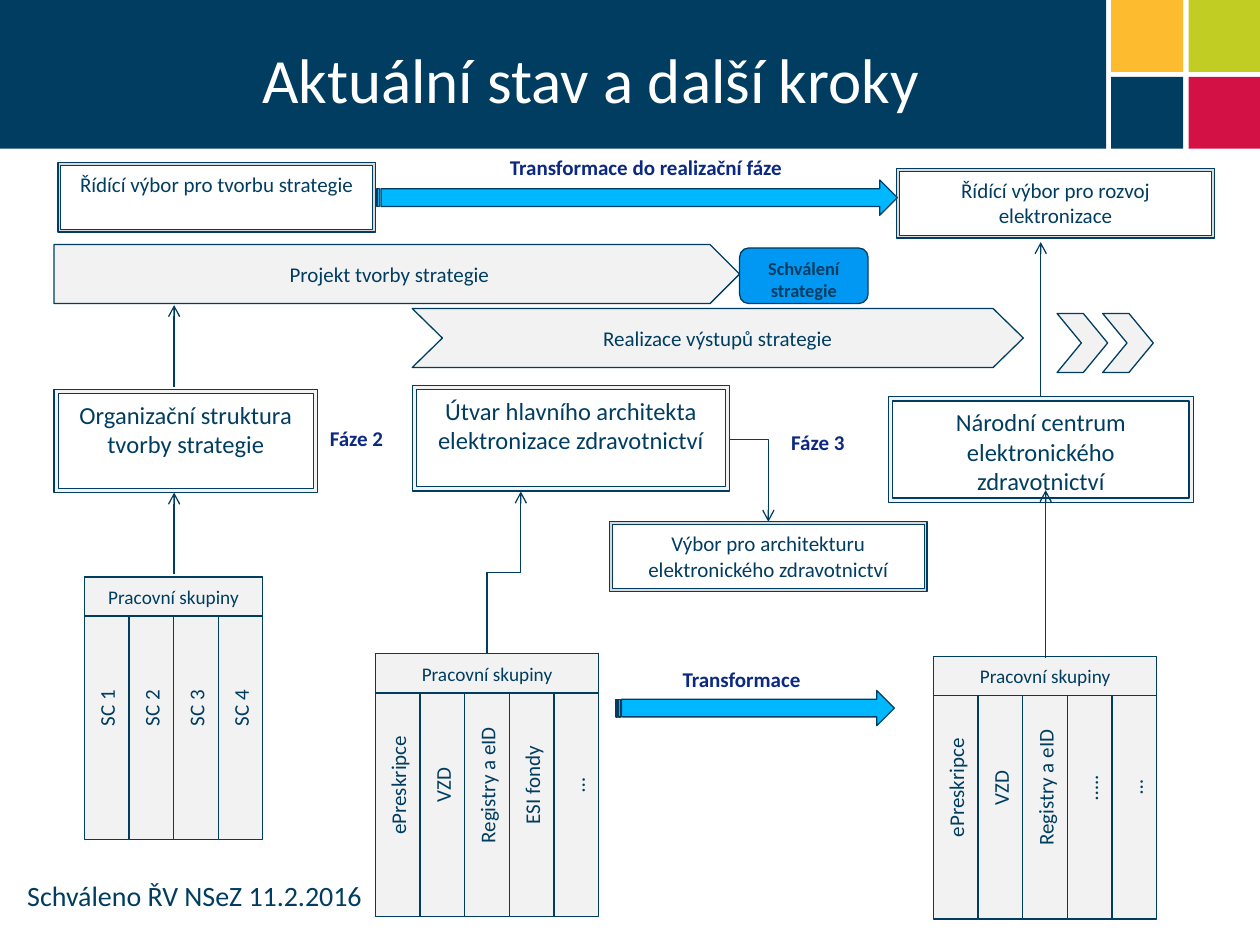
from lxml import etree
from pptx import Presentation
from pptx import util as u
from pptx.dml import color
from pptx.enum import shapes, text
from pptx.oxml import ns

Cm, Pt = u.Cm, u.Pt
KIND = shapes.MSO_SHAPE
MID, TOP = text.MSO_ANCHOR.MIDDLE, text.MSO_ANCHOR.TOP

HUES = {
    "navy": "003D61", "red": "D31145", "lime": "C2CD23", "gold": "FDBB30",
    "white": "FFFFFF", "pale": "F2F2F2", "gray": "D9D9D9", "cyan": "00B8FF",
    "azure": "0098F2", "ink": "0B2883",
}


def hue(name):
    return color.RGBColor.from_string(HUES[name])


def write(frame, words, size, tone="navy", bold=False, align=text.PP_ALIGN.CENTER):
    frame.text = words
    para = frame.paragraphs[0]
    para.alignment = align
    for run in para.runs:
        font = run.font
        font.name, font.size, font.bold = "Calibri", Pt(size), bold
        font.color.rgb = hue(tone)


def box(slide, kind, area, fill, line=True, adj=None):
    shape = slide.shapes.add_shape(kind, *map(Cm, area))
    shape.shadow.inherit = False
    shape.fill.solid()
    shape.fill.fore_color.rgb = hue(fill)
    if line:
        shape.line.color.rgb = hue("navy")
        shape.line.width = Pt(0.75)
    else:
        shape.line.fill.background()
    if adj is not None:
        shape.adjustments[0] = adj
    return shape


def fill_in(shape, words, size, anchor=MID, bold=False):
    frame = shape.text_frame
    frame.word_wrap = True
    frame.vertical_anchor = anchor
    write(frame, words, size, bold=bold)


def label(slide, area, words, size=12, tone="ink", bold=True):
    frame = slide.shapes.add_textbox(*map(Cm, area)).text_frame
    frame.word_wrap = False
    frame.auto_size = text.MSO_AUTO_SIZE.SHAPE_TO_FIT_TEXT
    write(frame, words, size, tone, bold, text.PP_ALIGN.LEFT)


def board(slide, area, words, size, fill):
    """Framed body or committee."""
    shape = box(slide, KIND.FRAME, area, fill, adj=0.041)
    fill_in(shape, words, size, TOP)


def panel(slide, left, top, names):
    """Working groups: upright columns under one heading."""
    step = 0.9
    for i, name in enumerate(names):
        cell = box(slide, KIND.RECTANGLE, (left + i * step, top, step, 5.3), "pale")
        fill_in(cell, name, 12)
        cell.text_frame._txBody.bodyPr.set("vert", "vert270")
    head = box(slide, KIND.RECTANGLE, (left, top, len(names) * step, 0.79), "pale")
    fill_in(head, "Pracovní skupiny", 11)


def arrow(slide, ends, kind=shapes.MSO_CONNECTOR.STRAIGHT):
    link = slide.shapes.add_connector(kind, *map(Cm, ends))
    link.line.color.rgb = hue("navy")
    link.line.width = Pt(0.75)
    etree.SubElement(link.line._get_or_add_ln(), ns.qn("a:tailEnd")).set("type", "arrow")
    etree.SubElement(link._element.spPr, ns.qn("a:effectLst"))
    return link


def banner(slide):
    box(slide, KIND.RECTANGLE, (0, 0, 22.3, 3), "navy", line=False)
    for i, tone in enumerate(("gold", "lime", "navy", "red")):
        row, col = divmod(i, 2)
        area = (22.4 + col * 1.56, row * 1.55, 1.45, 1.45)
        box(slide, KIND.RECTANGLE, area, tone, line=False)
    frame = slide.shapes.add_textbox(Cm(1.9), Cm(0.33), Cm(20.02), Cm(2.51)).text_frame
    frame.word_wrap = True
    frame.vertical_anchor = MID
    write(frame, "Aktuální stav a další kroky", 36, "white")


def links(slide):
    for x, start, end in ((3.51, 11.58, 9.93), (21.08, 13.26, 9.88),
                          (3.51, 7.8, 6.15), (20.98, 8, 4.88)):
        arrow(slide, (x, start, x, end))

    # Working groups up to the architect: an elbow turned upright
    elbow = shapes.MSO_CONNECTOR.ELBOW
    rise = arrow(slide, (11.79, 11.88, 8.53, 11.2), elbow)
    rise._element.spPr.find(ns.qn("a:xfrm")).set("rot", "5400000")

    # Architect down to the committee: a single bend
    drop = arrow(slide, (14.71, 8.86, 15.49, 10.52), elbow)
    drop._element.spPr.find(ns.qn("a:prstGeom")).set("prst", "bentConnector2")


def main():
    deck = Presentation()
    deck.slide_width, deck.slide_height = Cm(25.4), Cm(19.05)
    slide = deck.slides.add_slide(deck.slide_layouts[6])
    banner(slide)

    # Project stages
    plan = box(slide, KIND.PENTAGON, (1.09, 4.93, 13.82, 1.19), "pale")
    fill_in(plan, "Projekt tvorby strategie", 12)
    work = box(slide, KIND.CHEVRON, (8.31, 6.22, 12.32, 1.19), "pale", adj=0.512)
    fill_in(work, "Realizace výstupů strategie", 12)
    for left in (21.31, 22.23):
        box(slide, KIND.CHEVRON, (left, 6.32, 1.02, 1.19), "pale", adj=0.481)
    gate = box(slide, KIND.ROUNDED_RECTANGLE, (14.91, 5, 2.59, 1.12), "azure")
    fill_in(gate, "Schválení strategie", 10.5, TOP, bold=True)

    # Working groups
    panel(slide, 1.7, 11.63, ("SC 1", "SC 2", "SC 3", "SC 4"))
    panel(slide, 7.57, 13.18, ("ePreskripce", "VZD", "Registry a eID", "ESI fondy", "…"))
    panel(slide, 18.82, 13.23, ("ePreskripce", "VZD", "Registry a eID", "…..", "…"))

    # Bodies and committees
    for area, words in (
        ((1.09, 7.85, 5.31, 2.08), "Organizační struktura tvorby strategie"),
        ((8.31, 7.77, 6.4, 2.13), "Útvar hlavního architekta elektronizace zdravotnictví"),
        ((17.91, 8, 6.15, 2.13), "Národní centrum elektronického zdravotnictví"),
    ):
        board(slide, area, words, 14, "pale")
    for left, top, words in (
        (1.17, 3.28, "Řídící výbor pro tvorbu strategie"),
        (18.08, 3.4, "Řídící výbor pro rozvoj elektronizace"),
        (12.29, 10.52, "Výbor pro architekturu elektronického zdravotnictví"),
    ):
        board(slide, (left, top, 6.4, 1.4), words, 12, "gray")

    # Transformation arrows and links
    for area in ((7.57, 3.63, 10.52, 0.71), (12.42, 13.92, 5.61, 0.71)):
        box(slide, KIND.STRIPED_RIGHT_ARROW, area, "cyan")
    links(slide)

    # Labels
    label(slide, (10.03, 3, 6.17, 0.76), "Transformace do realizační fáze")
    label(slide, (13.51, 13.31, 2.92, 0.76), "Transformace")
    label(slide, (6.4, 8.46, 1.6, 0.76), "Fáze 2")
    label(slide, (15.7, 8.53, 1.6, 0.76), "Fáze 3")
    label(slide, (0.3, 17.58, 7.37, 0.94), "Schváleno ŘV NSeZ 11.2.2016", 16, "navy", False)

    deck.save("out.pptx")


if __name__ == "__main__":
    main()
